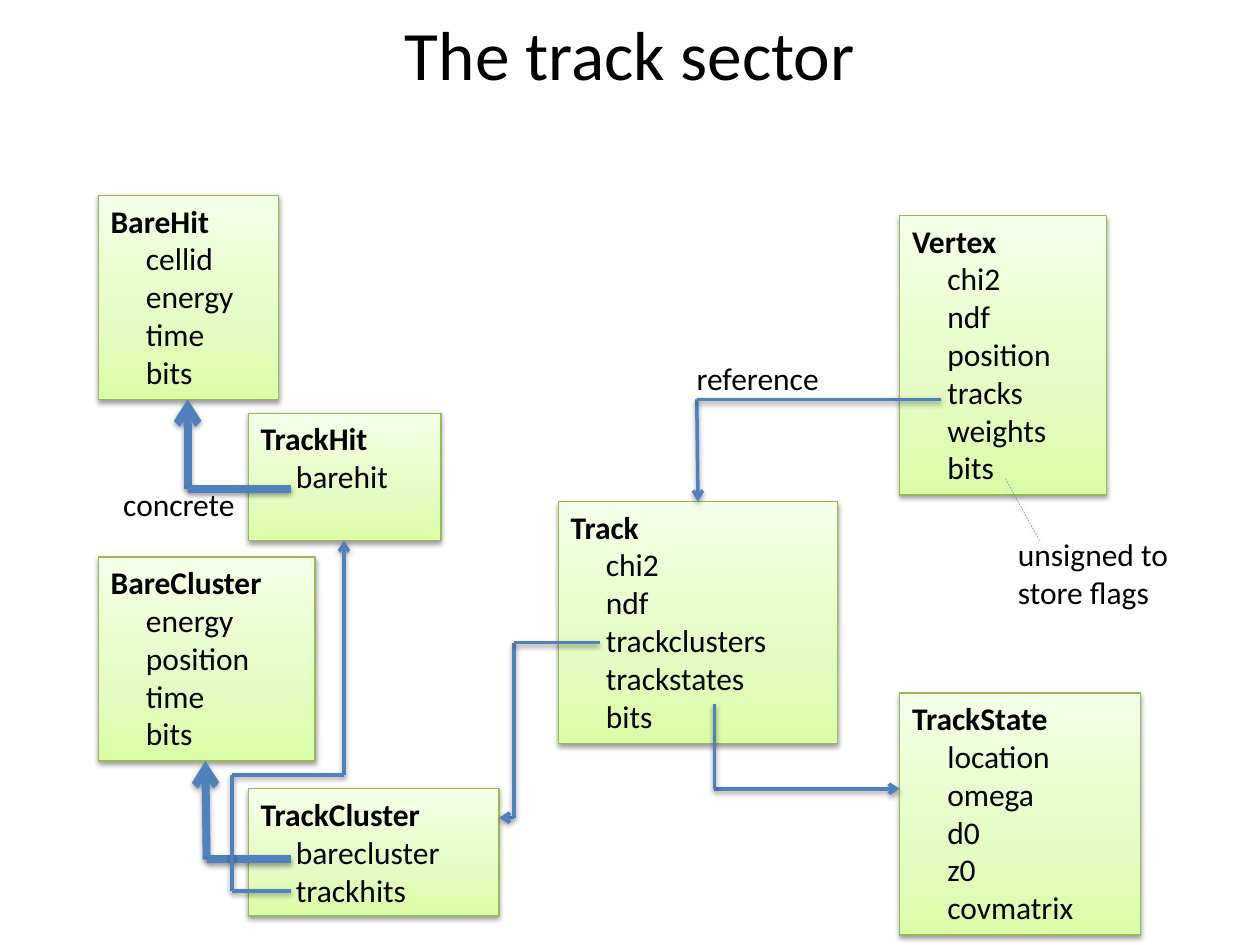
"""Build the class diagram slide of the track sector on a grid of 100 columns by 75 rows."""
import copy

import pptx
import pptx.dml.color
import pptx.enum.dml
import pptx.enum.shapes
import pptx.enum.text
import pptx.oxml
import pptx.oxml.ns
import pptx.util


def color(hex_value):
    """Turn a hex string into a colour."""
    return pptx.dml.color.RGBColor.from_string(hex_value)


def add_shadow(shape):
    """Give the shape a soft shadow straight below it."""
    shape._element.spPr.append(pptx.oxml.parse_xml(
        f'<a:effectLst {pptx.oxml.ns.nsdecls("a")}>'
        '<a:outerShdw blurRad="39400" dist="20300" dir="5400000" rotWithShape="0">'
        '<a:srgbClr val="000000"><a:alpha val="38000"/></a:srgbClr>'
        '</a:outerShdw></a:effectLst>'))


presentation = pptx.Presentation()
presentation.slide_width = pptx.util.Inches(10)
presentation.slide_height = pptx.util.Inches(7.5)
column = presentation.slide_width // 100
row = presentation.slide_height // 75
slide = presentation.slides.add_slide(presentation.slide_layouts[5])

title = slide.shapes.title
title_place = {"left": 5 * column, "top": 0, "width": 90 * column, "height": round(8.3 * row)}
for name, value in title_place.items():
    setattr(title, name, value)
title.text_frame.text = "The track sector"
title.text_frame.paragraphs[0].alignment = pptx.enum.text.PP_ALIGN.CENTER

classes = [
    (7.8, 15.5, 14.3, 16.2, "BareHit", ["cellid", "energy", "time", "bits"]),
    (19.7, 32.8, 15.3, 10.1, "TrackHit", ["barehit"]),
    (19.7, 62.6, 19.9, 10.1, "TrackCluster", ["barecluster", "trackhits"]),
    (71.4, 55, 19.1, 19.2, "TrackState", ["location", "omega", "d0", "z0", "covmatrix"]),
    (44.3, 39.8, 22.2, 19.2, "Track", ["chi2", "ndf", "trackclusters", "trackstates", "bits"]),
    (71.4, 17.1, 16.4, 22.2, "Vertex", ["chi2", "ndf", "position", "tracks", "weights", "bits"]),
    (7.8, 44.2, 17.2, 16.2, "BareCluster", ["energy", "position", "time", "bits"]),
]
gradient = [(0, "DAFDA7"), (0.35, "E4FCC2"), (1, "F5FFE7")]
for left, top, width, height, heading, members in classes:
    box = slide.shapes.add_shape(
        pptx.enum.shapes.MSO_SHAPE.RECTANGLE,
        round(left * column), round(top * row), round(width * column), round(height * row))
    box.fill.gradient()
    box.fill.gradient_angle = 90
    stop_list = box._element.spPr.find(".//" + pptx.oxml.ns.qn("a:gsLst"))
    stop_list.append(copy.deepcopy(stop_list[0]))
    for stop, (position, shade) in zip(box.fill.gradient_stops, gradient):
        stop.position = position
        stop.color.rgb = color(shade)
    box.line.color.rgb = color("98B955")
    box.line.width = pptx.util.Pt(0.75)
    add_shadow(box)
    box.text_frame.text = "\n".join([heading, *members])
    box.text_frame.vertical_anchor = pptx.enum.text.MSO_ANCHOR.TOP
    for index, paragraph in enumerate(box.text_frame.paragraphs):
        paragraph.alignment = pptx.enum.text.PP_ALIGN.LEFT
        paragraph.runs[0].font.bold = index == 0
        if index:
            paragraph._p.get_or_add_pPr().set("marL", str(round(2.8 * column)))

solid = pptx.enum.dml.MSO_LINE.SOLID
dashed = pptx.enum.dml.MSO_LINE.DASH
relations = [
    (4.5, solid, [(14.9, 31.7), (14.9, 38.8), (23.1, 38.8)]),
    (4.5, solid, [(16.3, 60.4), (16.4, 68.2), (23.1, 68.2)]),
    (2, solid, [(27.3, 42.9), (27.3, 61.5), (18.4, 61.5), (18.4, 70.7), (23.1, 70.7)]),
    (2, solid, [(39.6, 64.9), (40.8, 64.9), (40.8, 51), (47.6, 51)]),
    (2, solid, [(71.4, 62.6), (56.7, 62.6), (56.7, 55.9)]),
    (2, solid, [(55.4, 39.8), (55.3, 31.7), (74.7, 31.7)]),
    (0.25, dashed, [(79.8, 38), (82.5, 42.9)]),
]
for weight, dash, points in relations:
    for index, (start, end) in enumerate(zip(points, points[1:])):
        connector = slide.shapes.add_connector(
            pptx.enum.shapes.MSO_CONNECTOR.STRAIGHT,
            round(start[0] * column), round(start[1] * row),
            round(end[0] * column), round(end[1] * row))
        connector.line.color.rgb = color("4F81BD")
        line_format = {"width": pptx.util.Pt(weight), "dash_style": dash}
        for name, value in line_format.items():
            setattr(connector.line, name, value)
        if index == 0 and dash == solid:
            connector.line._get_or_add_ln().append(pptx.oxml.parse_xml(
                f'<a:headEnd {pptx.oxml.ns.nsdecls("a")} type="arrow"/>'))
        add_shadow(connector)

labels = [
    (54.3, 28, 13.2, 4, "reference"),
    (8.8, 38, 18.7, 4, "concrete"),
    (79.8, 42, 16.1, 7.1, "unsigned to store flags"),
]
for left, top, width, height, text in labels:
    label = slide.shapes.add_textbox(
        round(left * column), round(top * row), round(width * column), round(height * row))
    label.text_frame.word_wrap = True
    label.text_frame.text = text

for shape in slide.shapes:
    if shape.has_text_frame:
        size = 39.6 if shape.shape_id == title.shape_id else 18
        font_format = {"name": "Calibri", "size": pptx.util.Pt(size)}
        for paragraph in shape.text_frame.paragraphs:
            font = paragraph.runs[0].font
            font.color.rgb = color("000000")
            for name, value in font_format.items():
                setattr(font, name, value)
title.text_frame.vertical_anchor = pptx.enum.text.MSO_ANCHOR.MIDDLE

presentation.save("out.pptx")
